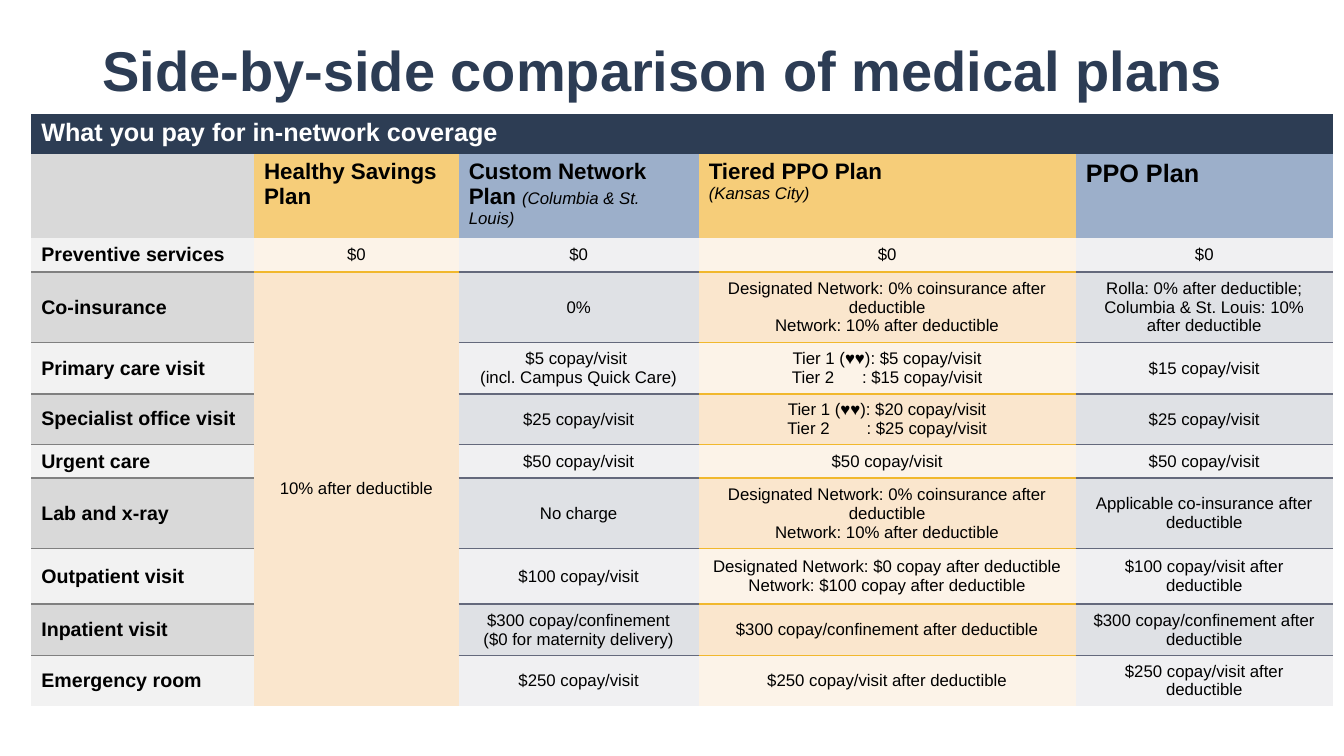
from copy import deepcopy
from dataclasses import dataclass

from lxml import etree
from pptx import Presentation
from pptx import util as u
from pptx.dml import color
from pptx.enum import text
from pptx.oxml import ns

COLORS = {
    "navy": "2C3C54", "banner": "2D3D54", "white": "FFFFFF", "black": "000000",
    "grey": "D9D9D9", "pale grey": "F2F2F2", "grey line": "808080",
    "gold": "F6CD79", "cream": "FCF3E8", "sand": "FAE6CD", "gold line": "F1B82D",
    "blue": "9CAFCA", "mist": "F0F0F2", "haze": "DFE1E5", "slate line": "64697C",
}

# The grid has 100 columns and 100 rows to the inch
UNIT = u.Inches(0.01)
SLIDE_COLUMNS, SLIDE_ROWS = 1333, 750
TABLE_LEFT, TABLE_TOP = 31, 113
ROW_HEIGHTS = (39, 78, 32, 66, 51, 48, 32, 66, 55, 51, 49)
FIRST_SERVICE_ROW = 2
NO_STYLE = "{2D5ABB26-0587-4C30-8999-92F81FD0307C}"


@dataclass(frozen=True)
class Run:
    words: str
    size: float = 12
    bold: bool = False
    italic: bool = False
    ink: str = "black"
    spacing: float = 0


@dataclass(frozen=True)
class Theme:
    head: str
    odd: str
    even: str
    line: str


@dataclass(frozen=True)
class Column:
    width: int
    theme: Theme
    heading: tuple[Run, ...] = ()


Paragraph = tuple[Run, ...]
Content = tuple[Paragraph, ...]

LABEL = Theme("grey", "pale grey", "grey", "grey line")
GOLD = Theme("gold", "cream", "sand", "gold line")
BLUE = Theme("blue", "mist", "haze", "slate line")


def plan_name(words: str, size: float = 16) -> Run:
    return Run(words, size, bold=True)


def region(words: str) -> Run:
    return Run(words, italic=True)


COLUMNS = (
    Column(221, LABEL),
    Column(203, GOLD, (plan_name("Healthy Savings Plan"),)),
    Column(238, BLUE, (plan_name("Custom Network Plan "), region("(Columbia & St. Louis)"))),
    Column(374, GOLD, (plan_name("Tiered PPO Plan\n"), region("(Kansas City)"))),
    Column(255, BLUE, (plan_name("PPO Plan", 18),)),
)


def lines(*paragraphs: str) -> Content:
    return tuple((Run(words),) for words in paragraphs)


def tiers(first: str, second: str, gap: float) -> Content:
    return ((Run(f"Tier 1 (♥♥): {first} copay/visit"),),
            (Run("Tier 2"), Run(" ", spacing=gap), Run(f": {second} copay/visit")))


DESIGNATED = lines("Designated Network: 0% coinsurance after deductible",
                   "Network: 10% after deductible")
SAVINGS_SHARED = lines("10% after deductible")

# Service, then custom network, tiered PPO and PPO
SERVICES = (
    ("Preventive services", lines("$0"), lines("$0"), lines("$0")),
    ("Co-insurance", lines("0%"), DESIGNATED,
     lines("Rolla: 0% after deductible; Columbia & St. Louis: 10% after deductible")),
    ("Primary care visit", lines("$5 copay/visit \n(incl. Campus Quick Care)"),
     tiers("$5", "$15", 16.5), lines("$15 copay/visit")),
    ("Specialist office visit", lines("$25 copay/visit"),
     tiers("$20", "$25", 23), lines("$25 copay/visit")),
    ("Urgent care", *[lines("$50 copay/visit")] * 3),
    ("Lab and x-ray", lines("No charge"), DESIGNATED,
     lines("Applicable co-insurance after deductible")),
    ("Outpatient visit", lines("$100 copay/visit"),
     lines("Designated Network: $0 copay after deductible",
           "Network: $100 copay after deductible"),
     lines("$100 copay/visit after deductible")),
    ("Inpatient visit", lines("$300 copay/confinement\n($0 for maternity delivery)"),
     *[lines("$300 copay/confinement after deductible")] * 2),
    ("Emergency room", lines("$250 copay/visit"),
     *[lines("$250 copay/visit after deductible")] * 2),
)


def rgb(name: str) -> color.RGBColor:
    return color.RGBColor.from_string(COLORS[name])


def add_run(paragraph, run: Run) -> None:
    for number, piece in enumerate(run.words.split("\n")):
        if number:
            line_break = etree.SubElement(paragraph._p, ns.qn("a:br"))
            line_break.append(deepcopy(paragraph.runs[-1]._r.rPr))
        if not piece:
            continue
        part = paragraph.add_run()
        part.text = piece
        formats = {"name": "Arial", "size": u.Pt(run.size),
                   "bold": run.bold, "italic": run.italic}
        for attribute, value in formats.items():
            setattr(part.font, attribute, value)
        part.font.color.rgb = rgb(run.ink)
        if run.spacing:
            part._r.get_or_add_rPr().set("spc", str(round(run.spacing * 100)))


def write(frame, content: Content, align=text.PP_ALIGN.LEFT) -> None:
    for number, runs in enumerate(content):
        paragraph = frame.add_paragraph() if number else frame.paragraphs[0]
        paragraph.alignment = align
        for run in runs:
            add_run(paragraph, run)


def add_border(cell, side: str, line: str) -> None:
    border = etree.SubElement(cell._tc.get_or_add_tcPr(), ns.qn(f"a:{side}"), w=str(u.Pt(1)))
    fill = etree.SubElement(border, ns.qn("a:solidFill"))
    etree.SubElement(fill, ns.qn("a:srgbClr"), val=COLORS[line])


def paint(cell, fill: str) -> None:
    cell.fill.solid()
    cell.fill.fore_color.rgb = rgb(fill)


def add_title(slide) -> None:
    title = slide.shapes.add_textbox(*(UNIT * n for n in (92, 40, 1150, 66))).text_frame
    for attribute, value in {"word_wrap": True,
                             "vertical_anchor": text.MSO_ANCHOR.MIDDLE}.items():
        setattr(title, attribute, value)
    write(title, ((Run("Side-by-side comparison of medical plans", 40, True, ink="navy"),),))
    title.paragraphs[0].line_spacing = 0.9


def add_plans(slide) -> None:
    width = sum(column.width for column in COLUMNS)
    plans = slide.shapes.add_table(
        len(ROW_HEIGHTS), len(COLUMNS),
        *(UNIT * n for n in (TABLE_LEFT, TABLE_TOP, width, sum(ROW_HEIGHTS)))).table
    plans.first_row = plans.horz_banding = False
    plans._tbl.tblPr.find(ns.qn("a:tableStyleId")).text = NO_STYLE
    for row, height in zip(plans.rows, ROW_HEIGHTS):
        row.height = UNIT * height

    # Banner across all columns
    banner = plans.cell(0, 0)
    banner.merge(plans.cell(0, len(COLUMNS) - 1))
    paint(banner, "banner")
    write(banner.text_frame,
          ((Run("What you pay for in-network coverage", 18, True, ink="white"),),))

    # Plan headings
    for index, column in enumerate(COLUMNS):
        plans.columns[index].width = UNIT * column.width
        heading = plans.cell(1, index)
        paint(heading, column.theme.head)
        write(heading.text_frame, (column.heading,))

    # One row for each service
    last = len(SERVICES) - 1
    for number, (service, custom, tiered, ppo) in enumerate(SERVICES):
        savings = (lines("$0"), SAVINGS_SHARED)[number] if number < 2 else ()
        contents = (((Run(service, 14, True),),), savings, custom, tiered, ppo)
        for index, (column, content) in enumerate(zip(COLUMNS, contents)):
            cell = plans.cell(FIRST_SERVICE_ROW + number, index)
            shared = index == 1 and number > 0
            cell.vertical_anchor = text.MSO_ANCHOR.MIDDLE
            if number and not (shared and number > 1):
                add_border(cell, "lnT", column.theme.line)
            if number < last and not shared:
                add_border(cell, "lnB", column.theme.line)
            paint(cell, column.theme.even if shared or number % 2 else column.theme.odd)
            write(cell.text_frame, content,
                  text.PP_ALIGN.CENTER if index else text.PP_ALIGN.LEFT)

    # Savings plan shares one answer below preventive services
    plans.cell(FIRST_SERVICE_ROW + 1, 1).merge(plans.cell(FIRST_SERVICE_ROW + last, 1))


def main() -> None:
    deck = Presentation()
    deck.slide_width, deck.slide_height = UNIT * SLIDE_COLUMNS, UNIT * SLIDE_ROWS
    slide = deck.slides.add_slide(deck.slide_layouts[6])
    add_title(slide)
    add_plans(slide)
    deck.save("out.pptx")


if __name__ == "__main__":
    main()
